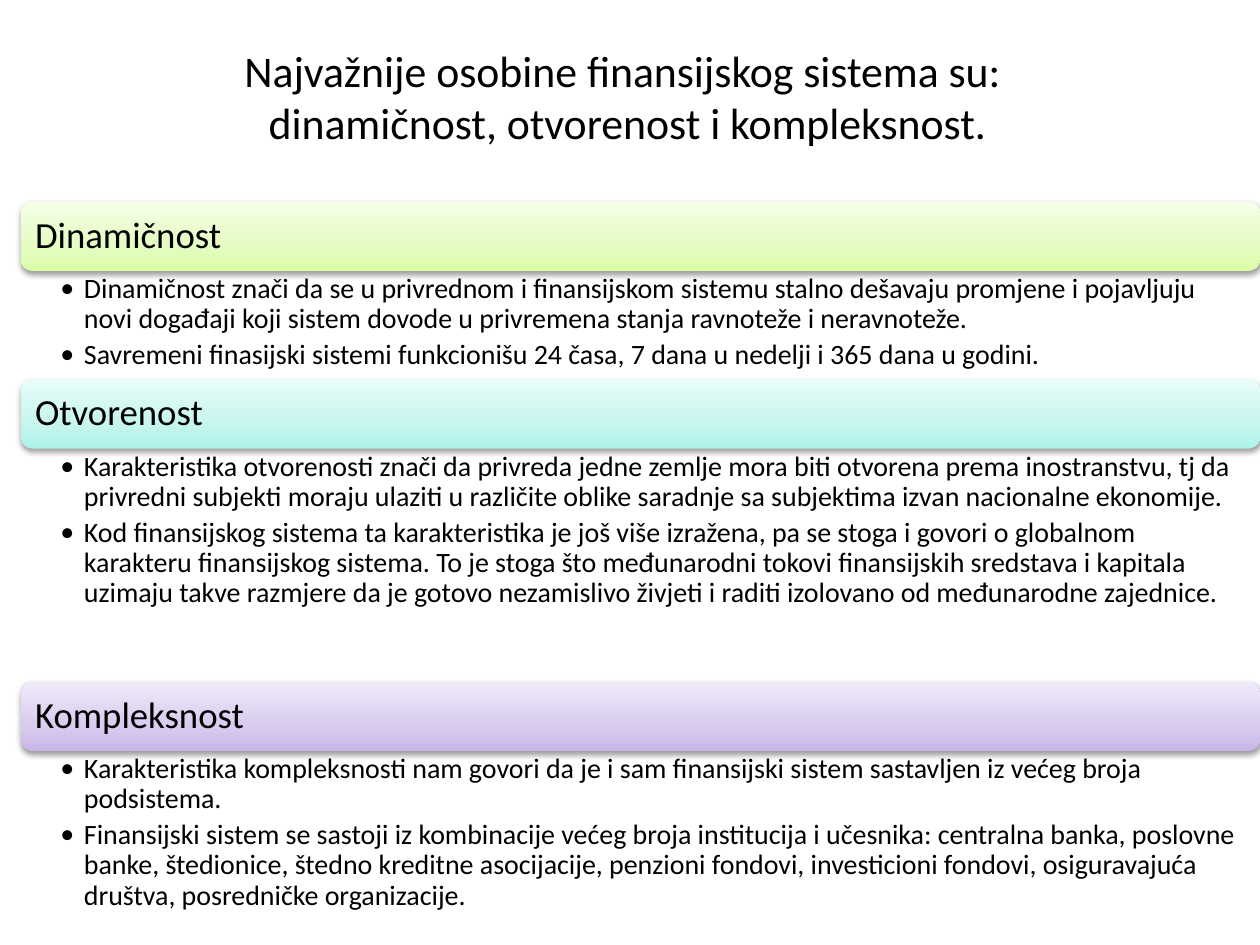
from copy import deepcopy
from dataclasses import dataclass

from lxml import etree
from pptx import Presentation
from pptx.dml.color import RGBColor
from pptx.enum import shapes, text
from pptx.oxml import ns
from pptx.util import Pt


@dataclass(frozen=True)
class Theme:
    font: str = "Calibri"
    ink: str = "000000"
    title_size: float = 25
    heading_size: float = 21
    body_size: float = 16
    green: tuple = ("DAFDA7", "E4FCC2", "F5FFE7")
    teal: tuple = ("AEF3E9", "C6F5EE", "E8FCF9")
    purple: tuple = ("C9B5E8", "D8CBEE", "F0EAF9")
    gradient_positions: tuple = (0, 0.35, 1)


THEME = Theme()
BAR_HEIGHT = 39.6
BAR_INSET = 1.8

TITLE = "Najvažnije osobine finansijskog sistema su: \ndinamičnost, otvorenost i kompleksnost."

# Heading, bar colours, body height, bullet texts
SECTIONS = [
    ("Dinamičnost", THEME.green, 61.9, [
        "Dinamičnost znači da se u privrednom i finansijskom sistemu stalno dešavaju promjene i pojavljuju "
        "novi događaji koji sistem dovode u privremena stanja ravnoteže i neravnoteže.",
        "Savremeni finasijski sistemi funkcionišu 24 časa, 7 dana u nedelji i 365 dana u godini.",
    ]),
    ("Otvorenost", THEME.teal, 133.2, [
        "Karakteristika otvorenosti znači da privreda jedne zemlje mora biti otvorena prema inostranstvu, tj da "
        "privredni subjekti moraju ulaziti u različite oblike saradnje sa subjektima izvan nacionalne ekonomije.",
        "Kod finansijskog sistema ta karakteristika je još više izražena, pa se stoga i govori o globalnom "
        "karakteru finansijskog sistema. To je stoga što međunarodni tokovi finansijskih sredstava i kapitala "
        "uzimaju takve razmjere da je gotovo nezamislivo živjeti i raditi izolovano od međunarodne zajednice.",
    ]),
    ("Kompleksnost", THEME.purple, 97.2, [
        "Karakteristika kompleksnosti nam govori da je i sam finansijski sistem sastavljen iz većeg broja "
        "podsistema.",
        "Finansijski sistem se sastoji iz kombinacije većeg broja institucija i učesnika: "
        "centralna banka, poslovne banke, štedionice, štedno kreditne asocijacije, penzioni fondovi, "
        "investicioni fondovi, osiguravajuća društva, posredničke organizacije.",
    ]),
]


def add_bullet(paragraph, indent):
    properties = paragraph._p.get_or_add_pPr()
    properties.set("marL", str(Pt(indent)))
    properties.set("indent", str(-Pt(indent)))
    etree.SubElement(properties, ns.qn("a:buFont")).set("typeface", THEME.font)
    etree.SubElement(properties, ns.qn("a:buChar")).set("char", "•")


def add_text(slide, box, paragraphs, *, size, insets=(7.2, 3.6, 7.2, 3.6),
             anchor=text.MSO_ANCHOR.MIDDLE, align=text.PP_ALIGN.LEFT,
             line_spacing=None, space_after=0, bullet_indent=None):
    frame = slide.shapes.add_textbox(*map(Pt, box)).text_frame
    frame.word_wrap = True
    frame.vertical_anchor = anchor
    frame.margin_left, frame.margin_top, frame.margin_right, frame.margin_bottom = map(Pt, insets)
    for index, content in enumerate(paragraphs):
        paragraph = frame.add_paragraph() if index else frame.paragraphs[0]
        paragraph.text = content
        paragraph.alignment = align
        paragraph.space_after = Pt(space_after)
        if line_spacing:
            paragraph.line_spacing = line_spacing
        if bullet_indent:
            paragraph.level = 1
            add_bullet(paragraph, bullet_indent)
        for run in paragraph.runs:
            run.font.name = THEME.font
            run.font.size = Pt(size)
            run.font.color.rgb = RGBColor.from_string(THEME.ink)


def fill_gradient(shape, colours):
    shape.fill.gradient()
    shape.fill.gradient_angle = 90
    stop_list = shape._element.spPr.find(".//" + ns.qn("a:gsLst"))
    stop_list.append(deepcopy(stop_list[0]))
    for stop, colour, position in zip(shape.fill.gradient_stops, colours, THEME.gradient_positions):
        stop.color.rgb = RGBColor.from_string(colour)
        stop.position = position


def add_shadow(shape):
    shape.shadow.inherit = False
    effects = shape._element.spPr.find(ns.qn("a:effectLst"))
    shadow = etree.SubElement(effects, ns.qn("a:outerShdw"), blurRad=str(Pt(3.1)),
                              dist=str(Pt(1.6)), dir="5400000", rotWithShape="0")
    colour = etree.SubElement(shadow, ns.qn("a:srgbClr"), val=THEME.ink)
    etree.SubElement(colour, ns.qn("a:alpha"), val="38000")


def add_section(slide, box, heading, colours, bullets):
    left, top, width, height = box

    # Heading bar
    bar = slide.shapes.add_shape(shapes.MSO_SHAPE.ROUNDED_RECTANGLE,
                                 *map(Pt, (left, top, width, BAR_HEIGHT)))
    fill_gradient(bar, colours)
    bar.line.fill.background()
    add_shadow(bar)
    heading_box = (left + BAR_INSET, top + BAR_INSET,
                   width - 2 * BAR_INSET, BAR_HEIGHT - 2 * BAR_INSET)
    add_text(slide, heading_box, [heading], size=THEME.heading_size,
             insets=(6.3, 6.3, 6.3, 6.3), line_spacing=0.9)

    # Bullets
    add_text(slide, (left, top + BAR_HEIGHT, width, height - BAR_HEIGHT), bullets,
             size=THEME.body_size, insets=(22.5, 2, 11.4, 2), anchor=text.MSO_ANCHOR.TOP,
             line_spacing=0.9, space_after=3.2, bullet_indent=13.5)


def add_title(slide, box):
    add_text(slide, box, [TITLE], size=THEME.title_size, align=text.PP_ALIGN.CENTER)


def main():
    presentation = Presentation()
    presentation.slide_width, presentation.slide_height = Pt(720), Pt(540)
    slide = presentation.slides.add_slide(presentation.slide_layouts[6])

    add_title(slide, (70.5, 9.4, 576, 90.7))
    top = 115.2
    for heading, colours, body_height, bullets in SECTIONS:
        height = BAR_HEIGHT + body_height
        add_section(slide, (12, top, 708, height), heading, colours, bullets)
        top += height

    presentation.save("out.pptx")


if __name__ == "__main__":
    main()
